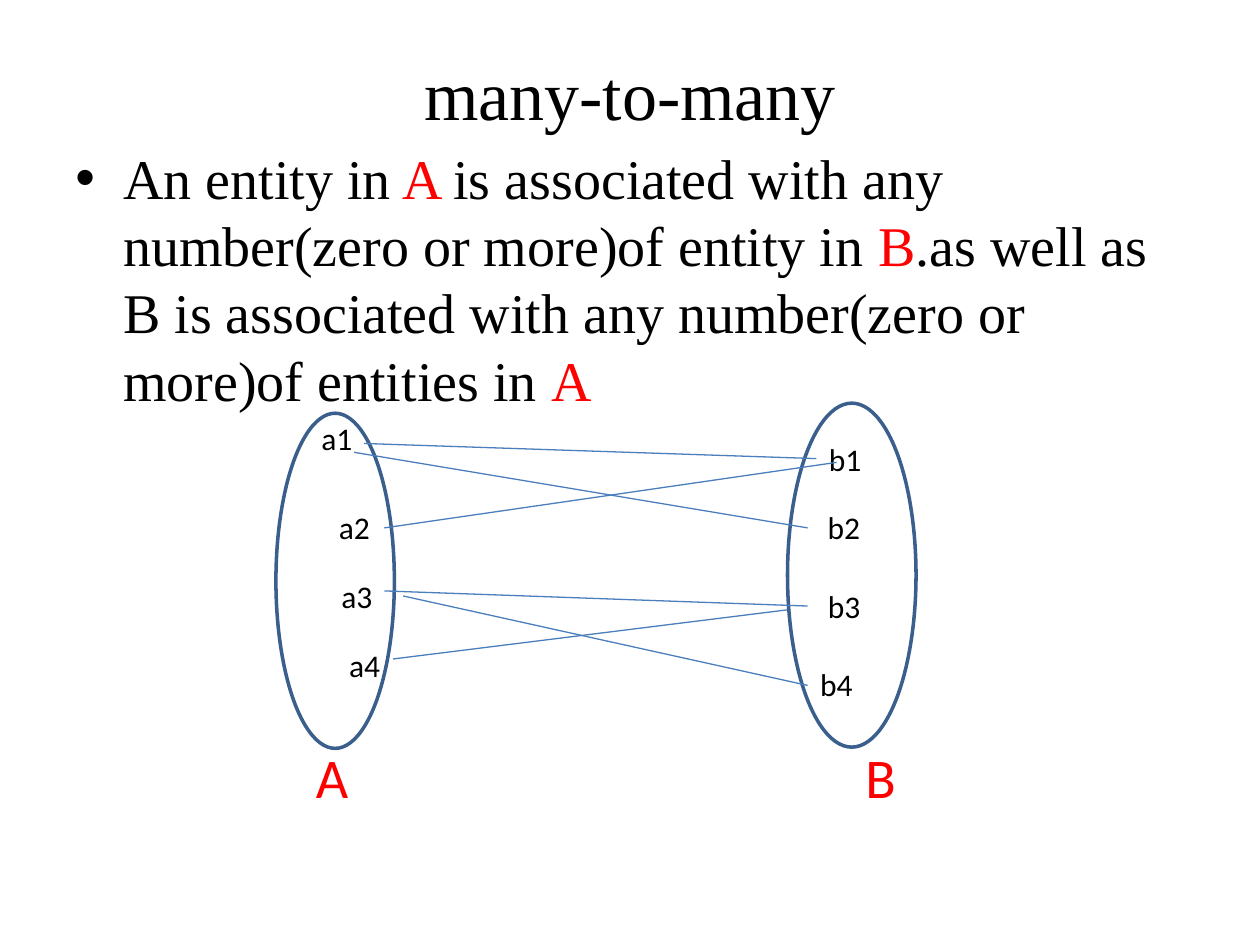
from dataclasses import dataclass

from lxml import etree
from pptx import Presentation
from pptx.dml.color import RGBColor
from pptx.enum.shapes import MSO_CONNECTOR, MSO_SHAPE
from pptx.enum.text import MSO_ANCHOR, PP_ALIGN
from pptx.oxml.ns import qn
from pptx.util import Inches, Pt

ELLIPSE = MSO_SHAPE.OVAL
STRAIGHT = MSO_CONNECTOR.STRAIGHT
MIDDLE, TOP = MSO_ANCHOR.MIDDLE, MSO_ANCHOR.TOP
CENTER, LEFT = PP_ALIGN.CENTER, PP_ALIGN.LEFT


@dataclass(frozen=True)
class Theme:
    ink: RGBColor = RGBColor(0, 0, 0)
    accent: RGBColor = RGBColor(255, 0, 0)
    paper: RGBColor = RGBColor(255, 255, 255)
    outline: RGBColor = RGBColor(0x3A, 0x5F, 0x8C)
    link: RGBColor = RGBColor(0x4B, 0x7E, 0xBC)
    serif: str = "Times New Roman"
    sans: str = "Calibri"
    title: int = 40
    body: int = 32
    label: int = 18


THEME = Theme()

DEFINITION = [
    ("An entity in", THEME.ink),
    (" A ", THEME.accent),
    ("is associated with any number(zero or more)of entity in ", THEME.ink),
    ("B", THEME.accent),
    (".as well as B is associated with any number(zero or more)of entities in ",
     THEME.ink),
    ("A", THEME.accent),
]

# Each set: ellipse box, name box, members as (text, box, left margin)
SETS = [
    ((2.19, 3.28, 0.94, 2.66), ("A", (2.41, 5.84, 0.6, 0.63)), [
        ("a1", (2.34, 3.28, 0.7, 0.4), 0.21),
        ("a2", (2.42, 3.98, 0.63, 0.4), 0.27),
        ("a3", (2.5, 4.53, 0.7, 0.4), 0.21),
        ("a4", (2.5, 5.08, 0.78, 0.4), 0.27),
    ]),
    ((6.25, 3.2, 1.02, 2.73), ("B", (6.77, 5.84, 0.6, 0.63)), [
        ("b1", (6.48, 3.44, 0.47, 0.4), 0.1),
        ("b2", (6.41, 3.98, 0.63, 0.4), 0.16),
        ("b3", (6.41, 4.61, 0.55, 0.4), 0.16),
        ("b4", (6.41, 5.23, 0.55, 0.4), 0.1),
    ]),
]

# Start and end of each link between members
LINKS = [
    ((2.89, 3.52), (6.48, 3.64)),
    ((2.81, 3.59), (6.41, 4.19)),
    ((3.05, 4.19), (6.64, 3.67)),
    ((3.05, 4.69), (6.41, 4.81)),
    ((3.2, 4.73), (6.41, 5.44)),
    ((3.12, 5.23), (6.25, 4.84)),
]


def inches(values):
    return [Inches(value) for value in values]


def add_text(page, box, spans, font, size, align=LEFT, anchor=TOP, margin=0.1):
    """Add a one-paragraph text box from (text, colour) spans."""
    frame = page.shapes.add_textbox(*inches(box)).text_frame
    settings = {"word_wrap": True, "vertical_anchor": anchor,
                "margin_left": Inches(margin), "margin_right": Inches(0.05)}
    for name, value in settings.items():
        setattr(frame, name, value)
    para = frame.paragraphs[0]
    para.alignment = align
    for text, color in spans:
        span = para.add_run()
        span.text = text
        for name, value in {"name": font, "size": Pt(size)}.items():
            setattr(span.font, name, value)
        span.font.color.rgb = color
    return para


def add_title(page, box):
    add_text(page, box, [("many-to-many", THEME.ink)], THEME.serif,
             THEME.title, CENTER, MIDDLE, margin=0.05)


def add_definition(page, box):
    para = add_text(page, box, DEFINITION, THEME.serif, THEME.body)
    para.space_before = Pt(5)
    props = para._p.get_or_add_pPr()
    props.set("marL", str(Inches(0.38)))
    props.set("indent", str(-Inches(0.38)))
    etree.SubElement(props, qn("a:buFont")).set("typeface", "Arial")
    etree.SubElement(props, qn("a:buChar")).set("char", "•")


def add_entity_set(page, box, name, members):
    ellipse = page.shapes.add_shape(ELLIPSE, *inches(box))
    ellipse.shadow.inherit = False
    ellipse.fill.solid()
    ellipse.fill.fore_color.rgb = THEME.paper
    ellipse.line.color.rgb = THEME.outline
    ellipse.line.width = Pt(2)
    name_text, name_box = name
    add_text(page, name_box, [(name_text, THEME.accent)], THEME.sans, THEME.body)
    for text, member_box, margin in members:
        add_text(page, member_box, [(text, THEME.ink)], THEME.sans,
                 THEME.label, margin=margin)


def add_link(page, start, end):
    link = page.shapes.add_connector(STRAIGHT, *inches(start + end))
    link.line.color.rgb = THEME.link
    link.line.width = Pt(0.75)
    etree.SubElement(link._element.spPr, qn("a:effectLst"))


def main():
    deck = Presentation()
    deck.slide_width, deck.slide_height = inches((10, 7.5))
    page = deck.slides.add_slide(deck.slide_layouts[6])
    add_title(page, (0.5, 0.3, 9, 0.87))
    add_definition(page, (0.5, 1.09, 9, 2.3))
    for entity_set in SETS:
        add_entity_set(page, *entity_set)
    for link in LINKS:
        add_link(page, *link)
    deck.save("out.pptx")


if __name__ == "__main__":
    main()
